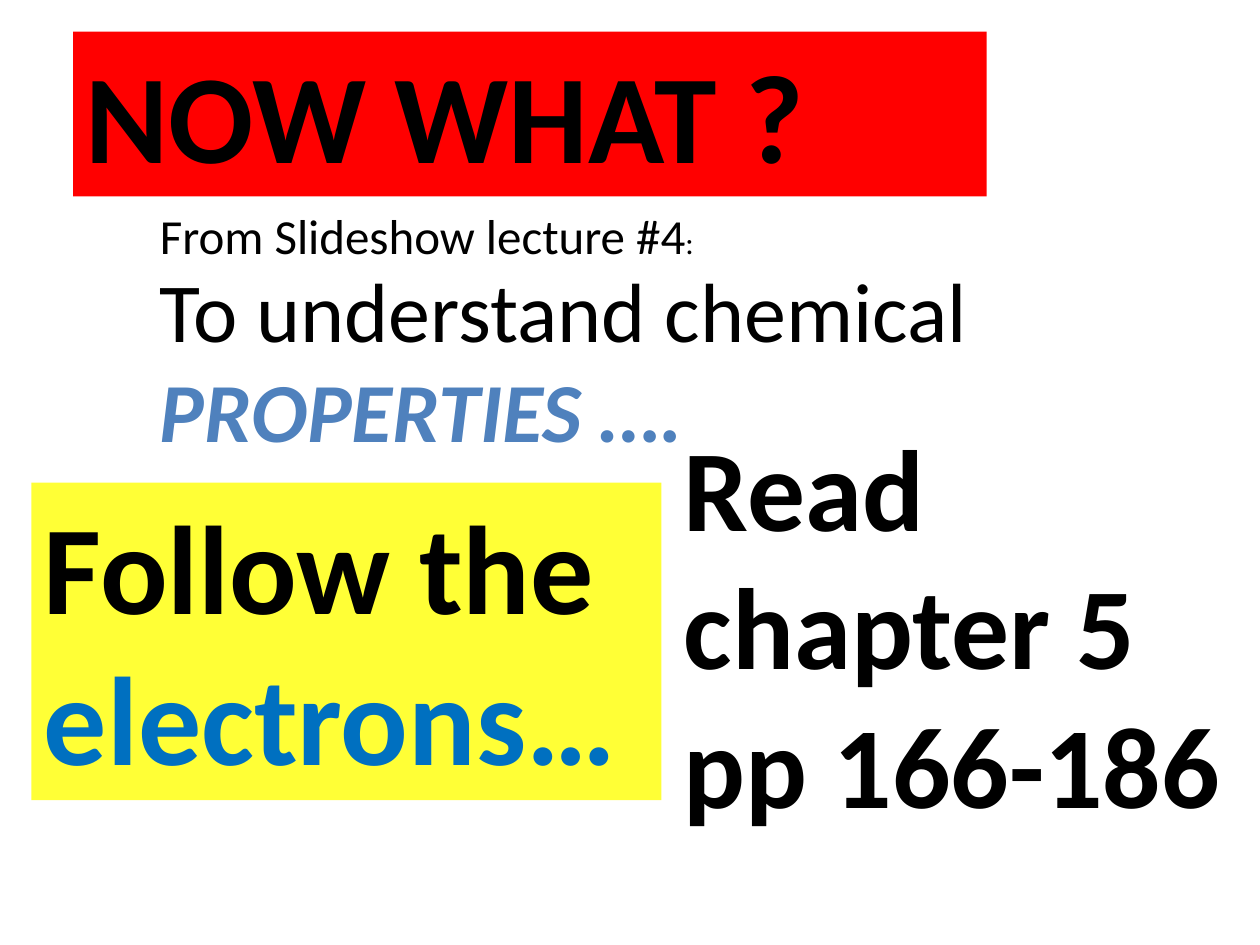
from typing import NamedTuple

from lxml.etree import SubElement
from pptx import Presentation
from pptx.dml.color import RGBColor
from pptx.enum.text import MSO_AUTO_SIZE
from pptx.oxml.ns import qn
from pptx.util import Inches, Pt


class Run(NamedTuple):
    text: str
    size: int
    color: str = "000000"
    bold: bool = False
    slant: bool = False


class Box(NamedTuple):
    left: float
    top: float
    width: float
    height: float
    lines: list[list[Run]]
    fill: str = ""
    alpha: int = 100


BOXES = [
    Box(1.17, 2, 7.08, 1.72, [[
        Run("To understand chemical ", 48),
        Run("PROPERTIES ….", 48, "4F81BD", True, True),
    ]]),
    Box(0.25, 3.83, 5, 2.52, [[
        Run("Follow the ", 72, bold=True),
        Run("electrons…", 72, "0070C0", True),
    ]], "FFFF00", 79),
    Box(1.17, 1.58, 6.33, 0.57, [[
        Run("From Slideshow lecture #4", 28),
        Run(":", 18),
    ]]),
    Box(0.58, 0.25, 7.25, 1.31, [[Run("NOW WHAT ?", 72, bold=True)]], "FF0000"),
    Box(5.33, 3.25, 4.67, 3.43, [
        [Run("Read chapter 5", 66, bold=True)],
        [Run("pp 166-186", 66, bold=True)],
    ]),
]


def paint(target, color: str) -> None:
    target.rgb = RGBColor.from_string(color)


def add_run(para, run: Run) -> None:
    part = para.add_run()
    part.text = run.text
    font = part.font
    font.name = "Calibri"
    font.size = Pt(run.size)
    font.bold = run.bold
    font.italic = run.slant
    paint(font.color, run.color)


def fill_box(shape, color: str, alpha: int) -> None:
    shape.fill.solid()
    paint(shape.fill.fore_color, color)
    if alpha < 100:
        tint = shape.fill._xPr.find(qn("a:solidFill"))[0]
        SubElement(tint, qn("a:alpha")).set("val", str(alpha * 1000))


def add_box(slide, box: Box) -> None:
    shape = slide.shapes.add_textbox(
        Inches(box.left), Inches(box.top), Inches(box.width), Inches(box.height))
    if box.fill:
        fill_box(shape, box.fill, box.alpha)
    frame = shape.text_frame
    frame.word_wrap = True
    frame.auto_size = MSO_AUTO_SIZE.SHAPE_TO_FIT_TEXT
    for i, line in enumerate(box.lines):
        para = frame.add_paragraph() if i else frame.paragraphs[0]
        for run in line:
            add_run(para, run)


def main() -> None:
    deck = Presentation()
    deck.slide_width, deck.slide_height = Inches(10), Inches(7.5)
    slide = deck.slides.add_slide(deck.slide_layouts[6])
    for box in BOXES:
        add_box(slide, box)
    deck.save("out.pptx")


if __name__ == "__main__":
    main()
